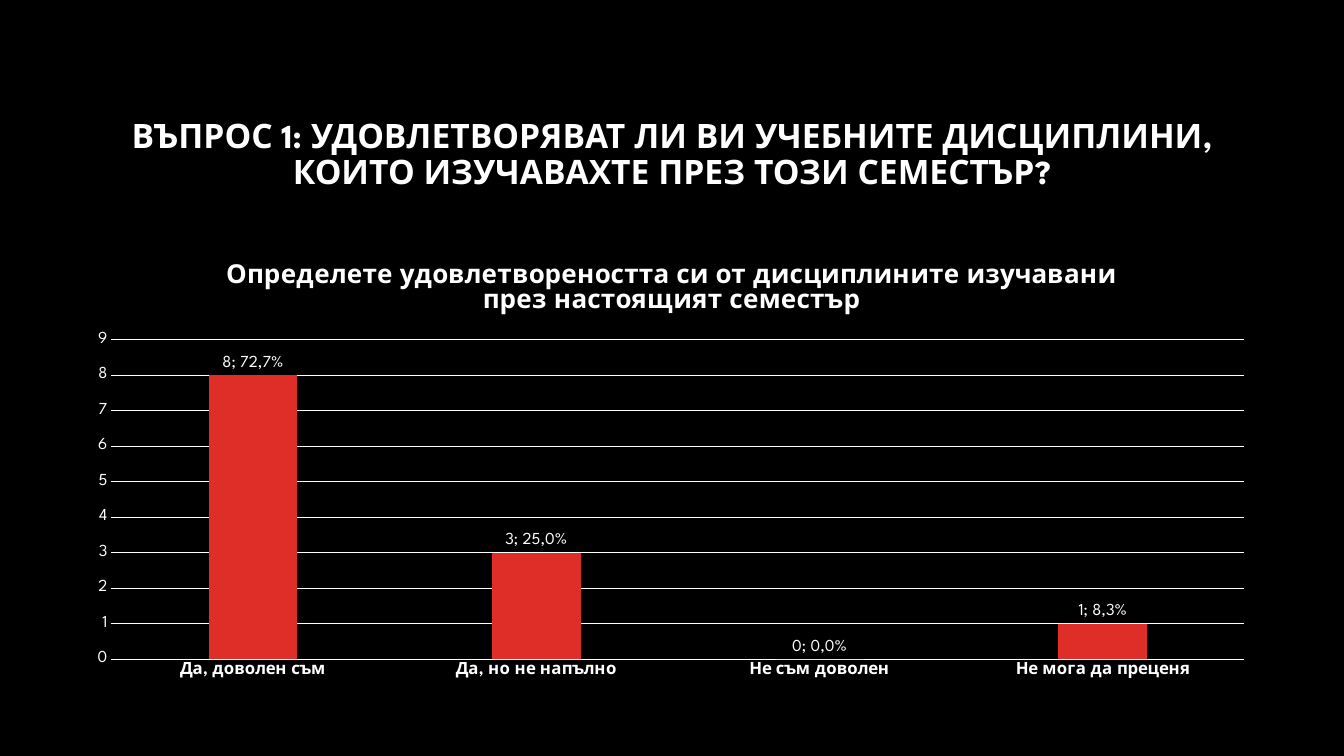
from lxml import etree
from pptx import Presentation
from pptx.chart.data import CategoryChartData as Data
from pptx.dml.color import RGBColor as Color
from pptx.enum.chart import XL_CHART_TYPE as Kind
from pptx.enum.chart import XL_LABEL_POSITION as Spot
from pptx.enum.chart import XL_TICK_MARK as Tick
from pptx.enum.text import MSO_ANCHOR as Anchor
from pptx.enum.text import PP_ALIGN as Align
from pptx.oxml.ns import qn
from pptx.util import Pt

FACE = "League Spartan"
WHITE, BLACK, RED = "FFFFFF", "000000", "DF2E28"

HEAD = ("ВЪПРОС 1: УДОВЛЕТВОРЯВАТ ЛИ ВИ УЧЕБНИТЕ ДИСЦИПЛИНИ, "
        "КОИТО ИЗУЧАВАХТЕ ПРЕЗ ТОЗИ СЕМЕСТЪР?")
NAME = ("Определете удовлетвореността си от дисциплините изучавани "
        "през настоящият семестър")
VOTES = [
    ("Да, доволен съм", 8, "8; 72,7%"),
    ("Да, но не напълно", 3, "3; 25,0%"),
    ("Не съм доволен", 0, "0; 0,0%"),
    ("Не мога да преценя", 1, "1; 8,3%"),
]


def paint(item, hue):
    """Give a fill a solid colour."""
    item.solid()
    item.fore_color.rgb = Color.from_string(hue)


def style(font, size, bold=False):
    font.name = FACE
    font.size = Pt(size)
    font.bold = bold
    paint(font.fill, WHITE)


def rule(line):
    line.width = Pt(0.75)
    paint(line.fill, WHITE)


def place(chart, x, y, w, h):
    """Fix the inner plot area, in shares of the chart box."""
    area = chart._chartSpace.chart.plotArea
    for old in area.findall(qn("c:layout")):
        area.remove(old)
    layout = etree.Element(qn("c:layout"))
    manual = etree.SubElement(layout, qn("c:manualLayout"))
    parts = [("layoutTarget", "inner"), ("xMode", "edge"), ("yMode", "edge"),
             ("x", x), ("y", y), ("w", w), ("h", h)]
    for tag, val in parts:
        etree.SubElement(manual, qn("c:" + tag)).set("val", str(val))
    area.insert(0, layout)


def add_head(slide, x, y, w, h):
    title = slide.shapes.title
    title.left, title.top, title.width, title.height = map(Pt, (x, y, w, h))
    frame = title.text_frame
    frame.word_wrap = True
    frame.vertical_anchor = Anchor.MIDDLE
    para = frame.paragraphs[0]
    para.alignment = Align.CENTER
    para.line_spacing = 0.9
    run = para.add_run()
    run.text = HEAD
    style(run.font, 24, True)


def add_bars(slide, x, y, w, h):
    names, counts, marks = zip(*VOTES)
    data = Data()
    data.categories = names
    data.add_series(NAME, counts)
    chart = slide.shapes.add_chart(
        Kind.COLUMN_CLUSTERED, *map(Pt, (x, y, w, h)), data).chart
    style(chart.font, 10)
    chart.has_legend = False
    place(chart, 0.03, 0.22, 0.95, 0.72)

    # Chart title
    chart.has_title = True
    chart.chart_title.include_in_layout = False
    run = chart.chart_title.text_frame.paragraphs[0].add_run()
    run.text = NAME
    style(run.font, 18.6, True)

    # Axes
    cat, val = chart.category_axis, chart.value_axis
    for axis in (cat, val):
        axis.major_tick_mark = axis.minor_tick_mark = Tick.NONE
        style(axis.tick_labels.font, 12, axis is cat)
    rule(cat.format.line)
    val.format.line.fill.background()
    val.minimum_scale, val.maximum_scale, val.major_unit = 0, 9, 1
    rule(val.major_gridlines.format.line)

    # Bars and their labels
    plot = chart.plots[0]
    plot.gap_width, plot.overlap = 219, -27
    plot.vary_by_categories = False
    bars = plot.series[0]
    paint(bars.format.fill, RED)
    for i, mark in enumerate(marks):
        label = bars.points[i].data_label
        run = label.text_frame.paragraphs[0].add_run()
        run.text = mark
        style(run.font, 12)
        label.position = Spot.OUTSIDE_END


def main():
    deck = Presentation()
    deck.slide_width, deck.slide_height = Pt(960), Pt(540)
    slide = deck.slides.add_slide(deck.slide_layouts[5])
    paint(slide.background.fill, BLACK)
    edge, wide = 54, 852
    add_head(slide, edge, 60.5, wide, 101.5)
    add_bars(slide, edge, 173, wide, 317)
    deck.save("out.pptx")


if __name__ == "__main__":
    main()
